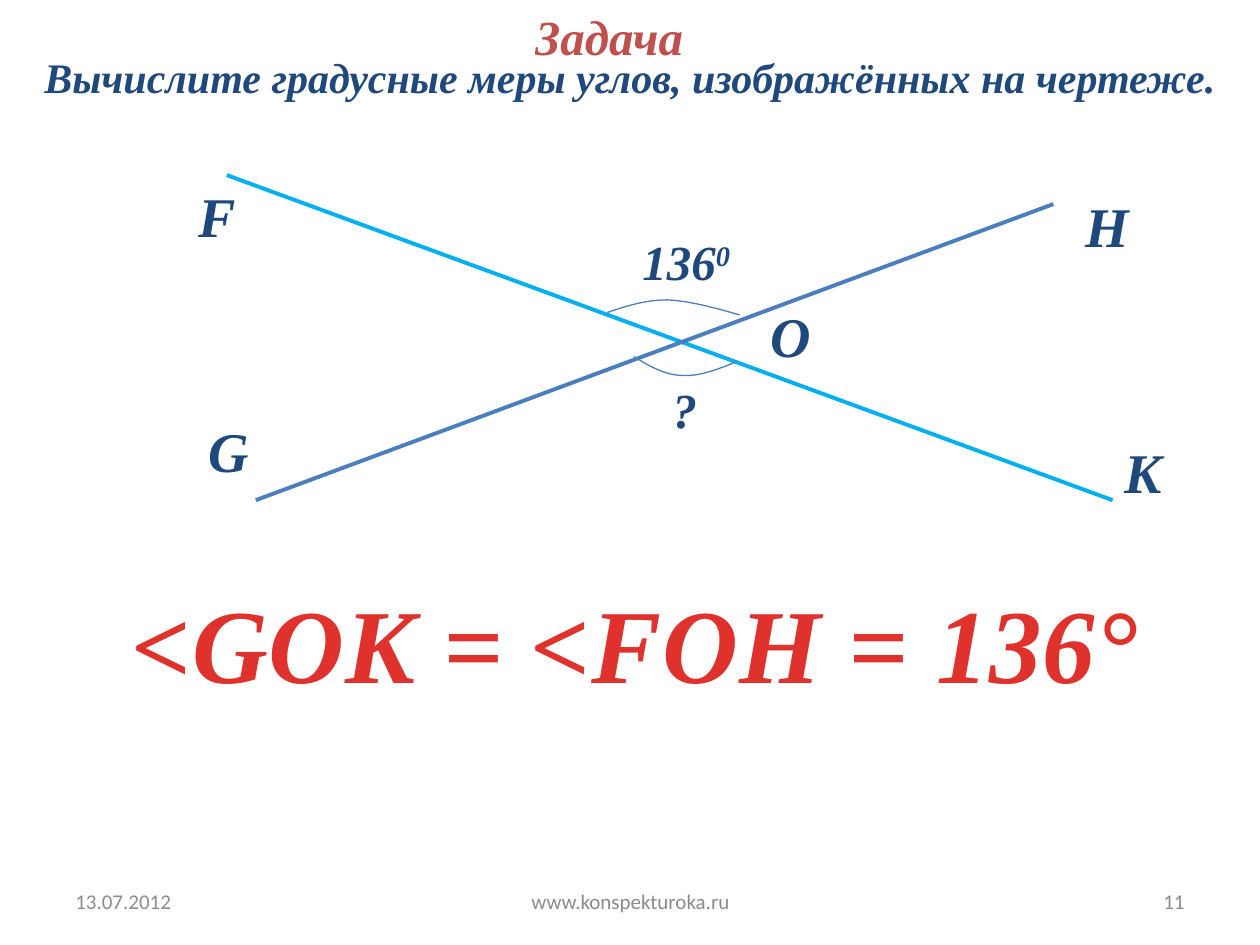
import pptx
import pptx.util
import pptx.dml.color
import pptx.enum.shapes
import pptx.enum.text
import pptx.oxml.ns
from lxml import etree

Inches, Pt = pptx.util.Inches, pptx.util.Pt
ALIGN = pptx.enum.text.PP_ALIGN
ANCHOR = pptx.enum.text.MSO_ANCHOR

COLORS = {"navy": "1F497D", "red": "C0504D", "answer": "E0322D",
          "gray": "8C8C8C", "cyan": "00B0F0", "blue": "4B7EBC"}

SERIF = {"name": "Times New Roman", "bold": True, "italic": True}
STYLES = {
    "footer": ({"name": "Calibri", "size": Pt(12)}, "gray"),
    "point": ({**SERIF, "size": Pt(32)}, "navy"),
    "angle": ({**SERIF, "size": Pt(28)}, "navy"),
    "title": ({**SERIF, "size": Pt(28)}, "red"),
    "task": ({**SERIF, "size": Pt(24)}, "navy"),
    "answer": ({**SERIF, "size": Pt(60)}, "answer"),
}

# text, (left, top, width, height), alignment
FOOTERS = [
    ("13.07.2012", (0.5, 6.95, 2.33, 0.4), ALIGN.LEFT),
    ("www.konspekturoka.ru", (3.42, 6.95, 3.17, 0.4), ALIGN.CENTER),
    ("11", (7.17, 6.95, 2.33, 0.4), ALIGN.RIGHT),
]
# letter, (left, top, width)
POINTS = [("G", (1.56, 3.26, 0.53)), ("F", (1.48, 1.39, 0.5)),
          ("O", (6.02, 2.34, 0.53)), ("H", (8.52, 1.47, 0.55)),
          ("K", (8.83, 3.42, 0.5))]
# start, end, color
LINES = [((1.8, 1.39), (8.83, 3.97), "cyan"),
         ((2.03, 3.97), (8.36, 1.62), "blue")]
# Each arc is two cubic curves: start, then control, control, end twice
ARCS = [
    [(4.82, 2.48), (4.97, 2.43), (5.12, 2.38), (5.3, 2.38),
     (5.47, 2.39), (5.67, 2.44), (5.87, 2.5)],
    [(5.85, 2.87), (5.7, 2.93), (5.55, 2.99), (5.42, 2.98),
     (5.28, 2.98), (5.16, 2.91), (5.03, 2.83)],
]
ARC_STEPS = 12


def rgb(color):
    return pptx.dml.color.RGBColor.from_string(COLORS[color])


def add_run(p, text, style):
    font_values, color = STYLES[style]
    r = p.add_run()
    r.text = text
    for key, value in font_values.items():
        setattr(r.font, key, value)
    r.font.color.rgb = rgb(color)
    return r


def add_text(slide, text, box, style, align=ALIGN.LEFT, anchor=ANCHOR.TOP, wrap=False):
    tf = slide.shapes.add_textbox(*map(Inches, box)).text_frame
    tf.word_wrap = wrap
    tf.vertical_anchor = anchor
    p = tf.paragraphs[0]
    p.alignment = align
    return p, add_run(p, text, style)


def add_line(slide, start, end, color):
    s = slide.shapes.add_connector(pptx.enum.shapes.MSO_CONNECTOR.STRAIGHT,
                                   *map(Inches, start + end))
    s.line.color.rgb = rgb(color)
    s.line.width = Pt(2.25)
    etree.SubElement(s._element.spPr, pptx.oxml.ns.qn("a:effectLst"))


def curve_points(a, b, c, d):
    """Points along a cubic curve, without its start."""
    for i in range(1, ARC_STEPS + 1):
        t = i / ARC_STEPS
        u = 1 - t
        yield tuple(u**3 * w + 3 * u * u * t * x + 3 * u * t * t * y + t**3 * z
                    for w, x, y, z in zip(a, b, c, d))


def add_arc(slide, nodes):
    nodes = [tuple(map(Inches, node)) for node in nodes]
    points = [p for i in (0, 3) for p in curve_points(*nodes[i:i + 4])]
    builder = slide.shapes.build_freeform(*nodes[0])
    builder.add_line_segments(points, close=False)
    s = builder.convert_to_shape()
    s.shadow.inherit = False
    s.fill.background()
    s.line.color.rgb = rgb("blue")
    s.line.width = Pt(0.75)


def main():
    prs = pptx.Presentation()
    prs.slide_width, prs.slide_height = Inches(10), Inches(7.5)
    slide = prs.slides.add_slide(prs.slide_layouts[6])

    for text, box, align in FOOTERS:
        add_text(slide, text, box, "footer", align, ANCHOR.MIDDLE, wrap=True)
    for line in LINES:
        add_line(slide, *line)
    for letter, box in POINTS:
        add_text(slide, letter, (*box, 0.64), "point")

    p, r = add_text(slide, "136", (5, 1.79, 0.92, 0.57), "angle")
    degree = add_run(p, "0", "angle")
    degree.font._element.set("baseline", "30000")
    add_text(slide, "?", (5.24, 2.96, 0.4, 0.57), "angle")
    for nodes in ARCS:
        add_arc(slide, nodes)

    add_text(slide, "Задача", (4.14, 0, 1.39, 0.57), "title", ALIGN.CENTER)
    add_text(slide, "Вычислите градусные меры углов, изображённых на чертеже.",
             (0, 0.36, 10, 1.18), "task", ALIGN.CENTER, wrap=True)
    p, r = add_text(slide, "<GOK = <FOH = 136°", (0.9, 4.54, 8.29, 1.11),
                    "answer", ALIGN.CENTER)
    r.font._element.set("spc", "50")

    prs.save("out.pptx")


if __name__ == "__main__":
    main()
